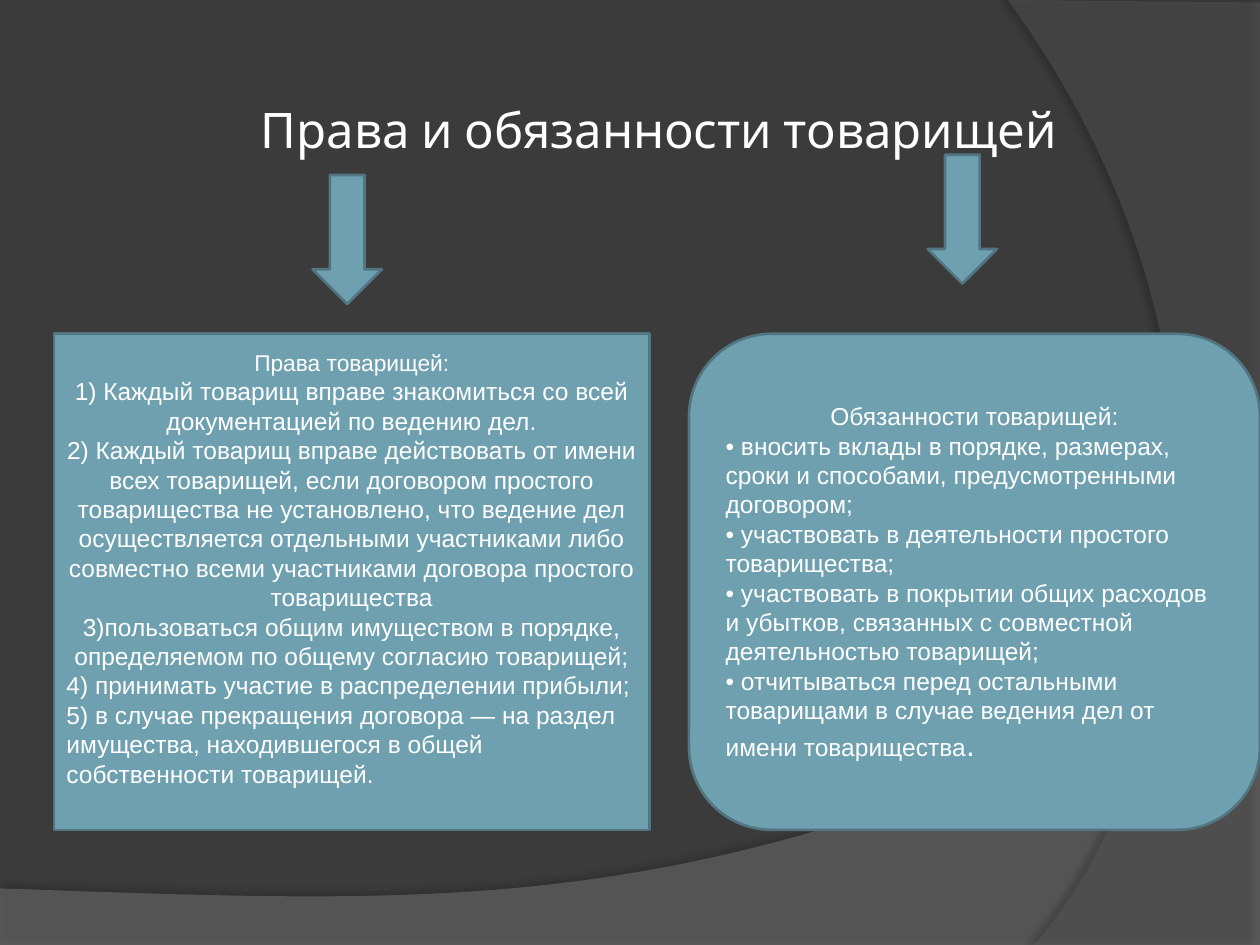
"""Build the slide on the rights and duties of partners."""
import lxml.etree
import pptx
import pptx.dml.color
import pptx.enum.shapes
import pptx.enum.text
import pptx.oxml.ns
import pptx.util

Cm = pptx.util.Cm
Pt = pptx.util.Pt
qn = pptx.oxml.ns.qn
Shape = pptx.enum.shapes.MSO_SHAPE
Align = pptx.enum.text.PP_ALIGN
Anchor = pptx.enum.text.MSO_ANCHOR

RIGHTS = [
    ("Права товарищей:", 13, Align.CENTER),
    ("1) Каждый товарищ вправе знакомиться со всей документацией по ведению дел.",
     14, Align.CENTER),
    ("2) Каждый товарищ вправе действовать от имени всех товарищей, если договором "
     "простого товарищества не установлено, что ведение дел осуществляется "
     "отдельными участниками либо совместно всеми участниками договора простого "
     "товарищества", 14, Align.CENTER),
    ("3)пользоваться общим имуществом в порядке, определяемом по общему согласию "
     "товарищей;", 14, Align.CENTER),
    ("4) принимать участие в распределении прибыли;", 14, Align.LEFT),
    ("5) в случае прекращения договора — на раздел имущества, находившегося в общей "
     "собственности товарищей.", 14, Align.LEFT),
]
DUTIES = [
    ("Обязанности товарищей:", 14, Align.CENTER),
    ("• вносить вклады в порядке, размерах, сроки и способами, предусмотренными "
     "договором;", 14, Align.LEFT),
    ("• участвовать в деятельности простого товарищества;", 14, Align.LEFT),
    ("• участвовать в покрытии общих расходов и убытков, связанных с совместной "
     "деятельностью товарищей;", 14, Align.LEFT),
    ("• отчитываться перед остальными товарищами в случае ведения дел от имени "
     "товарищества", 14, Align.LEFT),
]


def colour(value):
    """Return the colour for a hex string."""
    return pptx.dml.color.RGBColor.from_string(value)


def format_span(span, size, font):
    """Set a run in white with the given size and font."""
    span.font.size = Pt(size)
    span.font.name = font
    span.font.color.rgb = colour("FFFFFF")


def curve_points(start, first, second, end, steps=40):
    """Return points along a cubic curve, given in centimetres."""
    points = []
    for step in range(steps + 1):
        t = step / steps
        weights = ((1 - t) ** 3, 3 * t * (1 - t) ** 2, 3 * t * t * (1 - t), t ** 3)
        points.append(tuple(
            sum(weight * place for weight, place in zip(weights, places))
            for places in zip(start, first, second, end)))
    return points


def add_wave(page, corners, curve, fill, opacity, shadow):
    """Add a translucent backdrop outline with one curved edge and a shadow."""
    points = [(Cm(x), Cm(y)) for x, y in corners + curve_points(*curve)]
    builder = page.shapes.build_freeform(*points[0], scale=1.0)
    builder.add_line_segments(points[1:], close=True)
    wave = builder.convert_to_shape()
    wave.fill.solid()
    wave.fill.fore_color.rgb = colour(fill)
    wave.line.fill.background()
    wave.shadow.inherit = False
    properties = wave.element.spPr
    tint = properties.find(qn("a:solidFill")).find(qn("a:srgbClr"))
    lxml.etree.SubElement(tint, qn("a:alpha"), val=str(opacity * 1000))
    strength, distance, direction = shadow
    outer = lxml.etree.SubElement(
        properties.find(qn("a:effectLst")), qn("a:outerShdw"),
        blurRad=str(Pt(4)), dist=str(Pt(distance)), dir=str(direction * 60000),
        algn="ctr", rotWithShape="0")
    shade = lxml.etree.SubElement(outer, qn("a:srgbClr"), val="000000")
    lxml.etree.SubElement(shade, qn("a:alpha"), val=str(strength * 1000))


def add_block(page, kind, left, top, width, height):
    """Add a blue outlined preset shape."""
    block = page.shapes.add_shape(kind, Cm(left), Cm(top), Cm(width), Cm(height))
    block.shadow.inherit = False
    block.fill.solid()
    block.fill.fore_color.rgb = colour("6EA0B0")
    block.line.color.rgb = colour("517682")
    block.line.width = Pt(1.5)
    return block


def add_panel(page, kind, left, width, lines):
    """Add a text panel and return its text frame."""
    frame = add_block(page, kind, left, 6.73, width, 10).text_frame
    frame.word_wrap = True
    frame.vertical_anchor = Anchor.MIDDLE
    frame.text = "\n".join(text for text, size, align in lines)
    for para, (text, size, align) in zip(frame.paragraphs, lines):
        para.alignment = align
        format_span(para.runs[0], size, "Arial")
    return frame


def add_title(page, text):
    """Place and format the title in front of the backdrop."""
    title = page.shapes.title
    page.shapes.element.append(title.element)
    title.left, title.top = Cm(1.27), Cm(0.76)
    title.width, title.height = Cm(20.75), Cm(3.18)
    frame = title.text_frame
    frame.text = text
    frame.word_wrap = True
    frame.auto_size = pptx.enum.text.MSO_AUTO_SIZE.NONE
    frame.vertical_anchor = Anchor.MIDDLE
    frame.margin_left, frame.margin_right = Cm(3.99), Cm(0.13)
    frame.margin_top, frame.margin_bottom = Cm(0.62), Cm(0.13)
    frame.paragraphs[0].alignment = Align.LEFT
    format_span(frame.paragraphs[0].runs[0], 28, "Karla")


def main():
    """Build and save the deck."""
    deck = pptx.Presentation()
    deck.slide_width, deck.slide_height = Cm(25.4), Cm(19.05)
    page = deck.slides.add_slide(deck.slide_layouts[5])
    page.background.fill.solid()
    page.background.fill.fore_color.rgb = colour("3B3B3B")

    add_wave(page, [(0, 17.91), (0, 19.08), (25.4, 19.08)],
             [(25.4, 13.21), (14.2, 18.52), (9.93, 18.26), (0, 17.91)],
             "7F7F7F", 45, (35, 3.5, 270))
    add_wave(page, [(25.4, 0.05), (25.4, 19.05)],
             [(20.85, 19.05), (23.75, 15.72), (25.86, 7.62), (20.32, 0)],
             "5E5E5E", 40, (45, 4, 180))
    add_title(page, "Права и обязанности товарищей")

    rights = add_panel(page, Shape.RECTANGLE, 1.09, 12, RIGHTS)
    rights.margin_bottom = Cm(0.66)
    add_block(page, Shape.DOWN_ARROW, 6.3, 3.53, 1.4, 2.6)

    duties = add_panel(page, Shape.ROUNDED_RECTANGLE, 13.89, 11.51, DUTIES)
    stop = duties.paragraphs[-1].add_run()
    stop.text = "."
    format_span(stop, 18, "Arial")
    add_block(page, Shape.DOWN_ARROW, 18.7, 3.12, 1.4, 2.6)

    deck.save("out.pptx")


if __name__ == "__main__":
    main()
